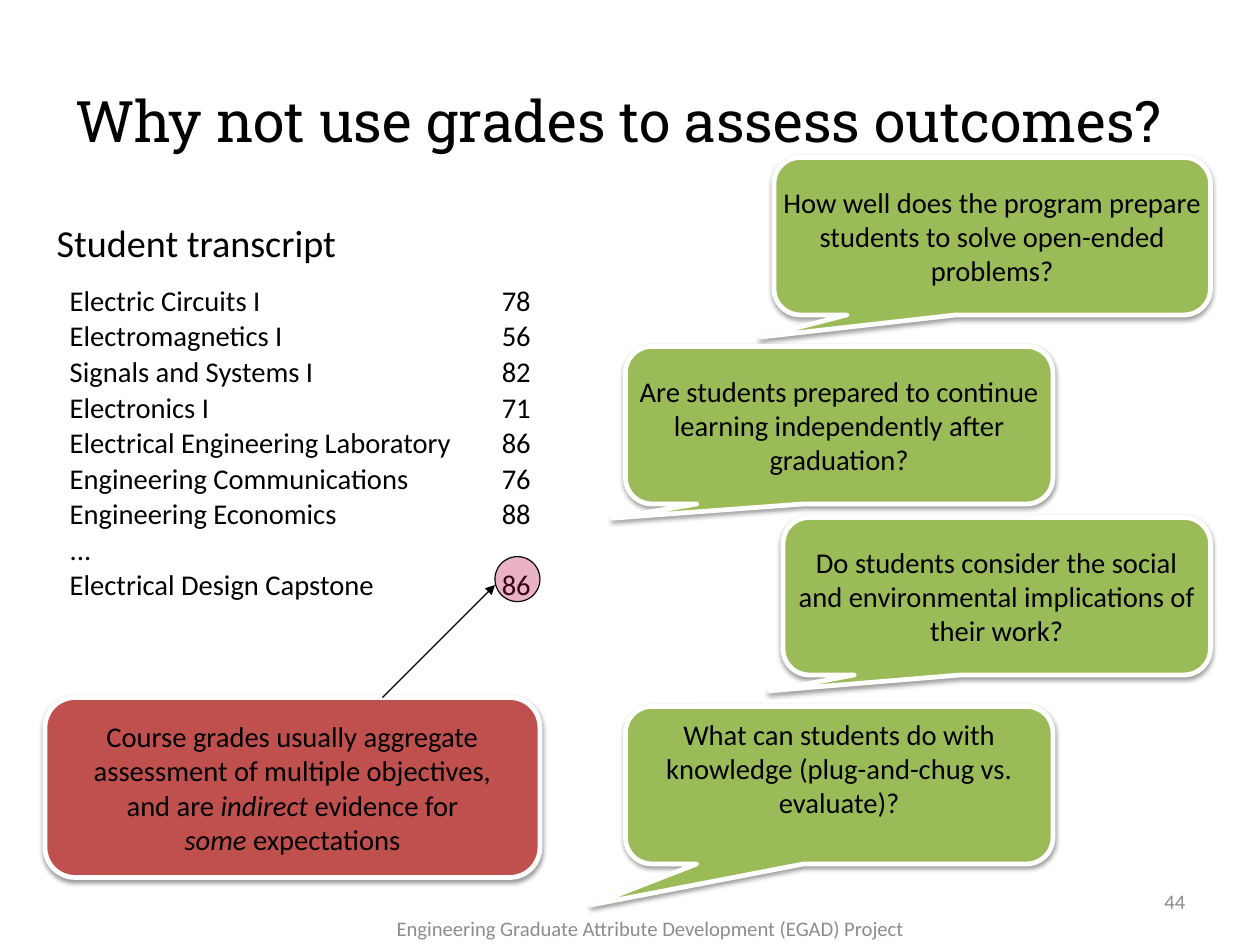
from dataclasses import dataclass

from lxml import etree
from pptx import Presentation
from pptx import util as u
from pptx.dml.color import RGBColor
from pptx.enum import shapes, text
from pptx.oxml import ns

Cm, Pt = u.Cm, u.Pt
MID = text.MSO_ANCHOR.MIDDLE
LEFT, MIDDLE, RIGHT = text.PP_ALIGN.LEFT, text.PP_ALIGN.CENTER, text.PP_ALIGN.RIGHT


@dataclass
class Theme:
    ink: str = "000000"
    gray: str = "8C8C8C"
    white: str = "FFFFFF"
    green: str = "9BBB59"
    red: str = "C0504D"
    pink: str = "B80047"
    face: str = "Calibri"
    slab: str = "Roboto Slab"
    title: int = 36
    head: int = 24
    body: int = 18
    small: int = 13
    edge: float = 3
    thin: float = 0.75


T = Theme()
TITLE = "Why not use grades to assess outcomes?"
FOOTER = "Engineering Graduate Attribute Development (EGAD) Project"
GRADES = [
    ("Electric Circuits I", "78"),
    ("Electromagnetics I", "56"),
    ("Signals and Systems I", "82"),
    ("Electronics I", "71"),
    ("Electrical Engineering Laboratory", "86"),
    ("Engineering Communications", "76"),
    ("Engineering Economics", "88"),
    ("...", ""),
    ("Electrical Design Capstone", "86"),
]
# Box, tail tip, bottom inset, lines
ASKS = [
    ((17.2, 3.5, 9.7, 3.5), (-0.53, 0.64), 0.13,
     ["How well does the program prepare", "students to solve open-ended", "problems?"]),
    ((13.9, 7.7, 9.5, 3.5), (-0.53, 0.59), 0.13,
     ["Are students prepared to continue", "learning independently after", "graduation?"]),
    ((17.4, 11.5, 9.5, 3.5), (-0.53, 0.6), 0.13,
     ["Do students consider the social", "and environmental implications of", "their work?"]),
    ((13.9, 15.7, 9.5, 3.5), (-0.58, 0.76), 0.9,
     ["What can students do with", "knowledge (plug-and-chug vs.", "evaluate)?"]),
]
# Asterisks mark italic words
CLAIM = ["Course grades usually aggregate", "assessment of multiple objectives,",
         "and are *indirect* evidence for", "*some* expectations"]


def apply(item, **form):
    for key, val in form.items():
        setattr(item, key, val)


def tag(top, name, **attrs):
    return etree.SubElement(top, ns.qn(name), attrs)


def write(frame, lines, size=T.body, color=T.ink, face=T.face, align=LEFT, pitch=1.0):
    """Fill a frame; an empty line becomes space before the next one."""
    gap, first = 0, True
    for line in lines:
        if not line:
            gap += size * 1.22 * pitch
            continue
        para = frame.paragraphs[0] if first else frame.add_paragraph()
        first = False
        apply(para, alignment=align, line_spacing=pitch)
        if gap:
            para.space_before = Pt(round(gap, 1))
            gap = 0
        for i, part in enumerate(line.split("*")):
            if part:
                run = para.add_run()
                run.text = part
                apply(run.font, size=Pt(size), name=face, italic=i % 2 == 1)
                run.font.color.rgb = RGBColor.from_string(color)


def inset(frame, side, top, base=None):
    apply(frame, margin_left=Cm(side), margin_right=Cm(side), margin_top=Cm(top),
          margin_bottom=Cm(top if base is None else base))


def place(box):
    return [Cm(v) for v in box]


def label(slide, box, words, anchor=MID, **form):
    frame = slide.shapes.add_textbox(*place(box)).text_frame
    apply(frame, word_wrap=True, vertical_anchor=anchor)
    inset(frame, 0.26, 0.14)
    write(frame, [words], **form)


def solid(slide, kind, box, fill, line, width):
    shape = slide.shapes.add_shape(kind, *place(box))
    shape.fill.solid()
    shape.fill.fore_color.rgb = RGBColor.from_string(fill)
    shape.line.color.rgb = RGBColor.from_string(line)
    shape.line.width = Pt(width)
    shape.shadow.inherit = False
    return shape


def bubble(slide, kind, box, fill, lines, adjust, base=0.13):
    shape = solid(slide, kind, box, fill, T.white, T.edge)
    for i, val in enumerate(adjust):
        shape.adjustments[i] = val
    # Soft shadow below
    effect = shape._element.spPr.find(ns.qn("a:effectLst"))
    shade = tag(effect, "a:outerShdw", blurRad=str(Pt(3.1)), dist=str(Pt(1.6)),
                dir="5400000", rotWithShape="0")
    tag(tag(shade, "a:srgbClr", val=T.ink), "a:alpha", val="38000")
    frame = shape.text_frame
    apply(frame, word_wrap=False, vertical_anchor=MID)
    inset(frame, 0.25, 0.13, base)
    write(frame, lines, align=MIDDLE)


def heading(slide, box):
    title = slide.shapes.title
    apply(title, **dict(zip(("left", "top", "width", "height"), place(box))))
    frame = title.text_frame
    apply(frame, word_wrap=True, vertical_anchor=MID, auto_size=text.MSO_AUTO_SIZE.NONE)
    inset(frame, 0.28, 0.15)
    write(frame, [TITLE], size=T.title, face=T.slab, align=MIDDLE)


def transcript(slide, box):
    x, y, w, h = box
    label(slide, (x, y, 8.5, 1.3), "Student transcript", text.MSO_ANCHOR.TOP,
          size=T.head, pitch=1.02)
    table = slide.shapes.add_table(1, 2, *place((x + 0.3, y + 1.45, w, h - 1.45))).table
    apply(table, first_row=False, horz_banding=False)
    for col, (wide, lines) in enumerate(zip((w - 1.42, 1.42), zip(*GRADES))):
        table.columns[col].width = Cm(wide)
        cell = table.cell(0, col)
        cell.fill.background()
        cell.vertical_anchor = MID
        inset(cell, 0.25, 0.13)
        write(cell.text_frame, lines, pitch=1.02)


def summary(slide, box):
    x, y, w, h = box
    bubble(slide, shapes.MSO_SHAPE.ROUNDED_RECTANGLE, box, T.red, CLAIM, [0.167])
    # Arrow to the capstone grade
    arrow = slide.shapes.add_connector(shapes.MSO_CONNECTOR.STRAIGHT,
                                       *place((x + 7.5, y, x + 10, y - 2.5)))
    arrow.line.color.rgb = RGBColor.from_string(T.ink)
    arrow.line.width = Pt(T.thin)
    tag(arrow.line._get_or_add_ln(), "a:tailEnd", type="triangle")
    tag(arrow._element.spPr, "a:effectLst")
    # Ring around the grade
    ring = solid(slide, shapes.MSO_SHAPE.OVAL, (x + 10, y - 3.13, 1, 1), T.pink, T.ink, T.thin)
    color = ring._element.spPr.find(ns.qn("a:solidFill")).find(ns.qn("a:srgbClr"))
    tag(color, "a:alpha", val="30000")


def questions(slide):
    for box, tip, base, lines in ASKS:
        bubble(slide, shapes.MSO_SHAPE.ROUNDED_RECTANGULAR_CALLOUT, box, T.green,
               lines, [*tip, 0.167], base)


def footer(slide, box):
    x, y, w, h = box
    form = dict(size=T.small, color=T.gray)
    label(slide, (x, y + 0.78, 13.28, 0.76), FOOTER, align=MIDDLE, **form)
    label(slide, (x + w - 6.53, y, 6.53, 1.12), "44", align=RIGHT, **form)


def main():
    deck = Presentation()
    apply(deck, slide_width=Cm(28), slide_height=Cm(21))
    slide = deck.slides.add_slide(deck.slide_layouts[5])
    heading(slide, (0.51, 1.83, 26.49, 1.65))
    footer(slide, (7.8, 19.46, 18.8, 1.54))
    transcript(slide, (1, 4.72, 11.02, 8.69))
    questions(slide)
    summary(slide, (1, 15.5, 11, 4))
    deck.save("out.pptx")


if __name__ == "__main__":
    main()
